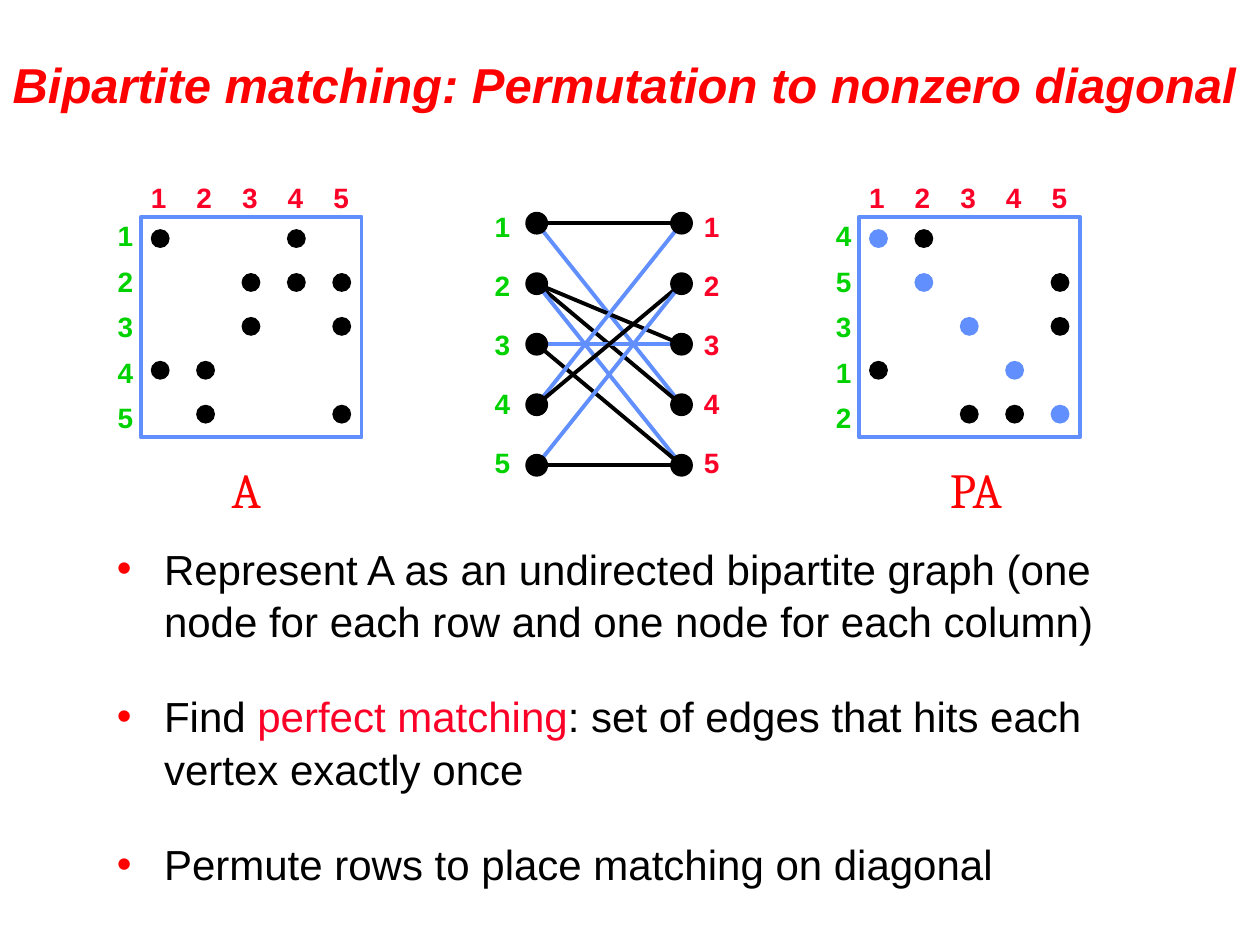
"""Build a slide on bipartite matching and the permutation to a nonzero diagonal."""
from lxml.etree import SubElement
from pptx import Presentation
from pptx.dml.color import RGBColor
from pptx.enum.shapes import MSO_CONNECTOR, MSO_SHAPE
from pptx.enum.text import MSO_ANCHOR, MSO_AUTO_SIZE, PP_ALIGN
from pptx.oxml.ns import qn
from pptx.util import Cm, Pt

INK = {"red": "FF0000", "rose": "FC0128", "green": "00D200",
       "blue": "618FFD", "black": "000000"}
ROWS = {1: (1, 4), 2: (3, 4, 5), 3: (3, 5), 4: (1, 2), 5: (2, 5)}
ORDER = (4, 5, 3, 1, 2)
MATCH = {row: col for col, row in enumerate(ORDER, 1)}
POINTS = (
    (("Represent A as an undirected bipartite graph "
      "(one node for each row and one node for each column)", "black"),),
    (("Find ", "black"), ("perfect matching", "rose"),
     (": set of edges that hits each vertex exactly once", "black")),
    (("Permute rows to place matching on diagonal", "black"),),
)


class Deck:
    def __init__(self):
        self.file = Presentation()
        self.file.slide_width, self.file.slide_height = Cm(25.4), Cm(19.05)
        self.slide = self.file.slides.add_slide(self.file.slide_layouts[1])
        self.shapes = self.slide.shapes

    def place(self, item, x, y, w, h):
        item.left, item.top, item.width, item.height = Cm(x), Cm(y), Cm(w), Cm(h)
        item.text_frame.word_wrap = True
        item.text_frame.auto_size = MSO_AUTO_SIZE.NONE
        return item.text_frame

    def run(self, para, text, ink, size, font="Arial", bold=False, italic=False):
        run = para.add_run()
        run.text = text
        run.font.name, run.font.size = font, Pt(size)
        run.font.bold, run.font.italic = bold, italic
        run.font.color.rgb = RGBColor.from_string(INK[ink])

    def title(self, text):
        frame = self.place(self.shapes.title, 0, 0.85, 25.4, 1.7)
        frame.vertical_anchor = MSO_ANCHOR.MIDDLE
        frame.paragraphs[0].alignment = PP_ALIGN.LEFT
        self.run(frame.paragraphs[0], text, "red", 28, bold=True, italic=True)

    def bullets(self, points):
        frame = self.place(self.slide.placeholders[1], 2.1, 10.77, 21.2, 7.42)
        for i, runs in enumerate(points):
            para = frame.add_paragraph() if i else frame.paragraphs[0]
            para.line_spacing = 1.05
            para.space_before = Pt(24 if i else 5)
            props = para._p.get_or_add_pPr()
            tint = SubElement(props, qn("a:buClr"))
            SubElement(tint, qn("a:srgbClr"), val=INK["red"])
            SubElement(props, qn("a:buChar"), char="•")
            for text, ink in runs:
                self.run(para, text, ink, 24)

    def label(self, text, x, y, ink, w=0.81, h=0.94, size=16, font="Arial", bold=True):
        box = self.shapes.add_textbox(Cm(x), Cm(y), Cm(w), Cm(h))
        box.text_frame.word_wrap = False
        self.run(box.text_frame.paragraphs[0], str(text), ink, size, font, bold)

    def dot(self, x, y, size, ink="black"):
        dot = self.shapes.add_shape(MSO_SHAPE.OVAL, Cm(x), Cm(y), Cm(size), Cm(size))
        dot.shadow.inherit = False
        dot.fill.solid()
        dot.fill.fore_color.rgb = RGBColor.from_string(INK[ink])
        dot.line.fill.background()

    def frame(self, x, y, size):
        box = self.shapes.add_shape(MSO_SHAPE.RECTANGLE, Cm(x), Cm(y), Cm(size), Cm(size))
        box.shadow.inherit = False
        box.fill.background()
        box.line.color.rgb = RGBColor.from_string(INK["blue"])
        box.line.width = Pt(2.25)

    def edge(self, x1, y1, x2, y2, ink):
        edge = self.shapes.add_connector(
            MSO_CONNECTOR.STRAIGHT, Cm(x1), Cm(y1), Cm(x2), Cm(y2))
        edge.line.color.rgb = RGBColor.from_string(INK[ink])
        edge.line.width = Pt(2.25)
        SubElement(edge._element.spPr, qn("a:effectLst"))

    def matrix(self, name, x, order, width, match):
        for i, row in enumerate(order):
            for col in ROWS[row]:
                ink = "blue" if match.get(row) == col else "black"
                self.dot(x + 0.2 + 0.915 * (col - 1), 4.62 + 0.885 * i, 0.38, ink)
            self.label(i + 1, x - 0.05 + 0.92 * i, 3.51, "rose")
            self.label(row, x - 0.72, 4.29 + 0.915 * i, "green")
        self.frame(x, 4.37, 4.45)
        self.label(name, x + 1.58, 9.14, "red", width, 1.45, 28, "Cambria", False)

    def graph(self, left, right, top, step):
        def level(node):
            return top + step * (node - 1)

        for row, cols in ROWS.items():
            for col in cols:
                ink = "blue" if MATCH[row] == col else "black"
                self.edge(left, level(row), right, level(col), ink)
        for x, tag, ink in ((left, left - 1.1, "green"), (right, right + 0.2, "rose")):
            for node in ROWS:
                self.dot(x - 0.23, level(node) - 0.23, 0.46)
                self.label(node, tag, top - 0.41 + 1.19 * (node - 1), ink)


def main():
    deck = Deck()
    deck.title("Bipartite matching: Permutation to nonzero diagonal")
    deck.bullets(POINTS)
    deck.matrix("A", 2.84, tuple(ROWS), 1.22, {})
    deck.graph(10.82, 13.74, 4.5, 1.22)
    deck.matrix("PA", 17.32, ORDER, 1.78, MATCH)
    deck.file.save("out.pptx")


if __name__ == "__main__":
    main()
